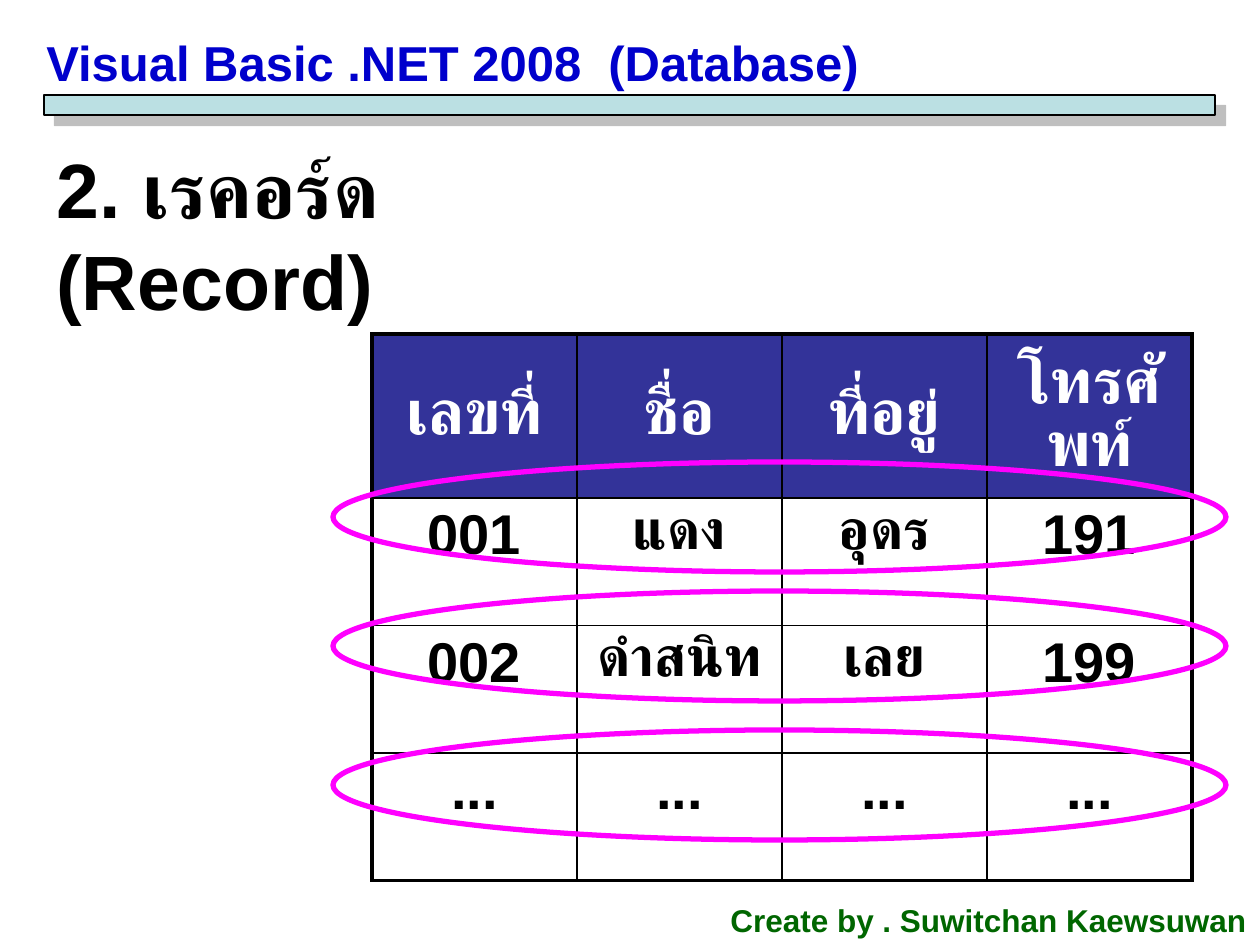
from dataclasses import dataclass

from lxml.etree import SubElement
from pptx import Presentation
from pptx.dml.color import RGBColor as RGB
from pptx.enum.shapes import MSO_SHAPE as Shape
from pptx.enum.text import MSO_ANCHOR as Anchor, PP_ALIGN as Align
from pptx.oxml.ns import qn
from pptx.util import Emu, Pt


@dataclass(frozen=True)
class Theme:
    font: str = "Arial"
    title: str = "0000CC"
    credit: str = "006600"
    ink: str = "000000"
    header_ink: str = "FFFFFF"
    header_fill: str = "333399"
    bar: str = "BBE0E3"
    shadow: str = "808080"
    ring: str = "FF00FF"
    title_size: int = 28
    heading_size: int = 44
    header_size: int = 36
    body_size: int = 32
    credit_size: int = 18
    thin: float = 1
    thick: float = 2.25


THEME = Theme()
RECORDS = [
    ["เลขที่", "ชื่อ", "ที่อยู่", "โทรศัพท์"],
    ["001", "แดง", "อุดร", "191"],
    ["002", "ดำสนิท", "เลย", "199"],
    ["..."] * 4,
]


def px(length):
    return Emu(round(length * 914400 / 126))


def write(frame, text, *, size, color, align=Align.LEFT, before=0):
    paragraph = frame.paragraphs[0]
    paragraph.alignment = align
    paragraph.space_before = Pt(before)
    run = paragraph.add_run()
    run.text = text
    run.font.name = THEME.font
    run.font.size = Pt(size)
    run.font.bold = True
    run.font.color.rgb = RGB.from_string(color)


def add_label(slide, box, text, wrap=True, **style):
    frame = slide.shapes.add_textbox(*map(px, box)).text_frame
    frame.word_wrap = wrap
    write(frame, text, **style)


def add_outlined(slide, kind, box, color, width):
    shape = slide.shapes.add_shape(kind, *map(px, box))
    shape.shadow.inherit = False
    shape.fill.background()
    shape.line.color.rgb = RGB.from_string(color)
    shape.line.width = Pt(width)
    return shape


def cast_shadow(shape):
    """Give the shape a half transparent shadow to the lower right."""
    effects = shape._element.spPr.find(qn("a:effectLst"))
    shadow = SubElement(effects, qn("a:outerShdw"), dist=str(Pt(8.5)),
                        dir="2700000", algn="ctr", rotWithShape="0")
    color = SubElement(shadow, qn("a:srgbClr"), val=THEME.shadow)
    SubElement(color, qn("a:alpha"), val="50000")


def add_banner(slide, left, top, width):
    add_label(slide, (left, top, 1226, 72), "Visual Basic .NET 2008  (Database)",
              size=THEME.title_size, color=THEME.title)
    bar = add_outlined(slide, Shape.RECTANGLE, (left + 10, top + 69, width, 20),
                       THEME.ink, 0.75)
    bar.fill.solid()
    bar.fill.fore_color.rgb = RGB.from_string(THEME.bar)
    cast_shadow(bar)


def set_borders(cell, widths):
    properties = cell._tc.get_or_add_tcPr()
    for side, width in widths.items():
        line = SubElement(properties, qn(f"a:ln{side}"), w=str(Pt(width)))
        fill = SubElement(line, qn("a:solidFill"))
        SubElement(fill, qn("a:srgbClr"), val=THEME.ink)


def add_record_table(slide, left, top, width, height):
    last_row, last_column = len(RECORDS) - 1, len(RECORDS[0]) - 1
    table = slide.shapes.add_table(last_row + 1, last_column + 1,
                                   *map(px, (left, top, width, height))).table
    table.first_row = table.horz_banding = False
    for r, record in enumerate(RECORDS):
        is_header = r == 0
        size = THEME.header_size if is_header else THEME.body_size
        for c, value in enumerate(record):
            cell = table.cell(r, c)
            outer = {"L": c == 0, "R": c == last_column,
                     "T": is_header, "B": r == last_row}
            set_borders(cell, {side: THEME.thick if edge else THEME.thin
                               for side, edge in outer.items()})
            if is_header:
                cell.fill.solid()
                cell.fill.fore_color.rgb = RGB.from_string(THEME.header_fill)
                cell.vertical_anchor = Anchor.MIDDLE
            else:
                cell.fill.background()
            write(cell.text_frame, value, size=size, align=Align.CENTER,
                  color=THEME.header_ink if is_header else THEME.ink,
                  before=size * 0.2)


def add_record_rings(slide, left, top, width, height):
    for offset in (0, 129, 268):
        add_outlined(slide, Shape.OVAL, (left, top + offset, width, height),
                     THEME.ring, 3)


def main():
    deck = Presentation()
    deck.slide_width, deck.slide_height = px(1260), px(945)
    slide = deck.slides.add_slide(deck.slide_layouts[6])
    add_banner(slide, 34, 26, 1171)
    add_label(slide, (718, 895, 542, 50), "Create by . Suwitchan Kaewsuwan",
              wrap=False, size=THEME.credit_size, color=THEME.credit)
    add_label(slide, (44, 135, 582, 105), "2. เรคอร์ด (Record)",
              size=THEME.heading_size, color=THEME.ink)
    add_record_table(slide, 372, 334, 820, 510)
    add_record_rings(slide, 333, 462, 893, 110)
    deck.save("out.pptx")


if __name__ == "__main__":
    main()
